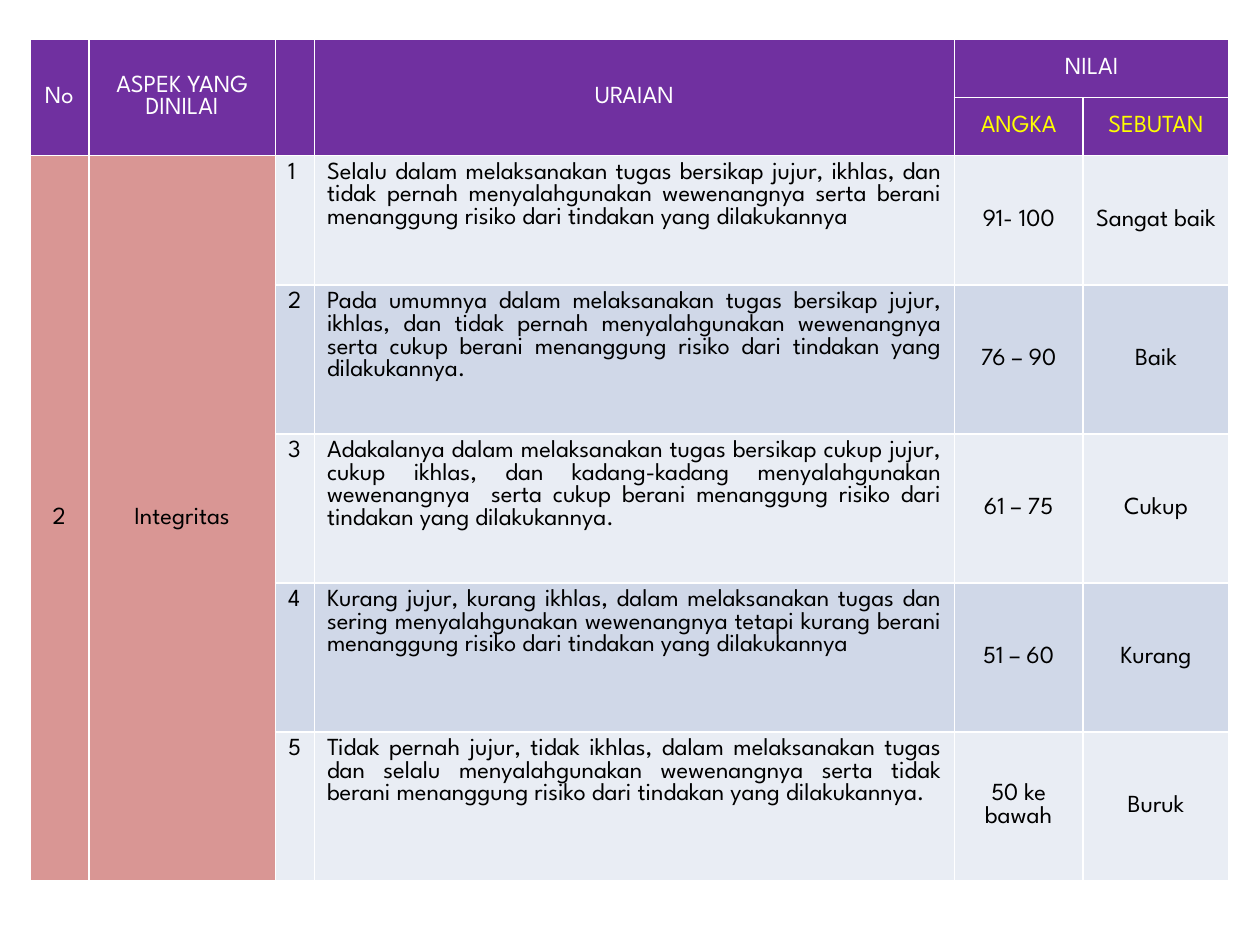
from dataclasses import dataclass

from lxml.etree import SubElement
from pptx import Presentation
from pptx.dml.color import RGBColor
from pptx.enum.text import MSO_ANCHOR as Anchor, PP_ALIGN as Align
from pptx.oxml.ns import qn
from pptx.table import Table, _Cell as Cell
from pptx.util import Pt

FONT = "League Spartan"
WHITE, BLACK, YELLOW = "FFFFFF", "000000", "FFFF00"
PURPLE, ROSE = "7030A0", "D99694"
BANDS = ("E9EDF4", "D0D8E8")
COLUMN_WIDTHS = (33.8, 106.6, 22.3, 365.7, 73.5, 83.5)
ROW_HEIGHTS = (33.2, 33.2, 74, 85.1, 85.1, 85.1, 85.1)


@dataclass(frozen=True)
class Heading:
    row: int
    column: int
    text: str
    color: str = WHITE
    last_row: int = 1
    last_column: int | None = None


@dataclass(frozen=True)
class Grade:
    description: str
    score: str
    label: str


HEADINGS = (
    Heading(0, 0, "No"),
    Heading(0, 1, "ASPEK YANG DINILAI"),
    Heading(0, 2, ""),
    Heading(0, 3, "URAIAN"),
    Heading(0, 4, "NILAI", last_row=0, last_column=5),
    Heading(1, 4, "ANGKA", YELLOW),
    Heading(1, 5, "SEBUTAN", YELLOW),
)
GRADES = (
    Grade("Selalu dalam melaksanakan tugas bersikap jujur, ikhlas, dan tidak pernah "
          "menyalahgunakan wewenangnya serta berani menanggung risiko dari tindakan "
          "yang dilakukannya", "91- 100", "Sangat baik"),
    Grade("Pada umumnya dalam melaksanakan tugas bersikap jujur, ikhlas, dan tidak pernah "
          "menyalahgunakan wewenangnya serta cukup berani menanggung risiko dari tindakan "
          "yang dilakukannya.", "76 – 90", "Baik"),
    Grade("Adakalanya dalam melaksanakan tugas bersikap cukup jujur, cukup ikhlas, dan "
          "kadang-kadang menyalahgunakan wewenangnya  serta cukup berani menanggung risiko "
          "dari tindakan yang dilakukannya.", "61 – 75", "Cukup"),
    Grade("Kurang jujur, kurang ikhlas, dalam melaksanakan tugas dan sering "
          "menyalahgunakan wewenangnya tetapi kurang berani menanggung risiko dari tindakan "
          "yang dilakukannya", "51 – 60", "Kurang"),
    Grade("Tidak pernah jujur, tidak ikhlas, dalam melaksanakan tugas dan selalu "
          "menyalahgunakan wewenangnya serta tidak berani menanggung risiko dari tindakan "
          "yang dilakukannya.", "50 ke bawah", "Buruk"),
)


def rgb(color: str) -> RGBColor:
    return RGBColor.from_string(color)


def add_borders(cell: Cell, color: str = WHITE, width: float = 1) -> None:
    properties = cell._tc.get_or_add_tcPr()
    for side in ("lnL", "lnR", "lnT", "lnB"):
        line = SubElement(properties, qn(f"a:{side}"), w=str(Pt(width)))
        fill = SubElement(line, qn("a:solidFill"))
        SubElement(fill, qn("a:srgbClr"), val=color)


def write(cell: Cell, text: str, *, fill: str, color: str = BLACK, size: float = 14,
          align: Align = Align.CENTER, anchor: Anchor = Anchor.MIDDLE) -> None:
    cell.fill.solid()
    cell.fill.fore_color.rgb = rgb(fill)
    cell.vertical_anchor = anchor
    para = cell.text_frame.paragraphs[0]
    para.alignment = align
    if text:
        span = para.add_run()
        span.text = text
        span.font.name = FONT
        span.font.size = Pt(size)
        span.font.color.rgb = rgb(color)


def draw_heading(table: Table, heading: Heading) -> None:
    cell = table.cell(heading.row, heading.column)
    last_column = heading.last_column or heading.column
    if (heading.last_row, last_column) != (heading.row, heading.column):
        cell.merge(table.cell(heading.last_row, last_column))
    write(cell, heading.text, fill=PURPLE, color=heading.color)


def draw_grade(table: Table, number: int, grade: Grade) -> None:
    row = number + 1
    fill = BANDS[(number - 1) % 2]
    write(table.cell(row, 2), str(number), fill=fill, align=Align.LEFT, anchor=Anchor.TOP)
    write(table.cell(row, 3), grade.description, fill=fill, align=Align.JUSTIFY,
          anchor=Anchor.TOP)
    write(table.cell(row, 4), grade.score, fill=fill)
    write(table.cell(row, 5), grade.label, fill=fill)


def main() -> None:
    deck = Presentation()
    deck.slide_width, deck.slide_height = Pt(720), Pt(540)
    page = deck.slides.add_slide(deck.slide_layouts[6])
    table = page.shapes.add_table(
        len(ROW_HEIGHTS), len(COLUMN_WIDTHS), Pt(17), Pt(22.6),
        Pt(sum(COLUMN_WIDTHS)), Pt(sum(ROW_HEIGHTS))).table
    table.first_row = table.horz_banding = False
    for column, width in zip(table.columns, COLUMN_WIDTHS):
        column.width = Pt(width)
    for row, height in zip(table.rows, ROW_HEIGHTS):
        row.height = Pt(height)
    for cell in table.iter_cells():
        add_borders(cell)

    for heading in HEADINGS:
        draw_heading(table, heading)
    for column, text in enumerate(("2", "Integritas")):
        cell = table.cell(2, column)
        cell.merge(table.cell(len(ROW_HEIGHTS) - 1, column))
        write(cell, text, fill=ROSE)
    for number, grade in enumerate(GRADES, start=1):
        draw_grade(table, number, grade)
    deck.save("out.pptx")


if __name__ == "__main__":
    main()
